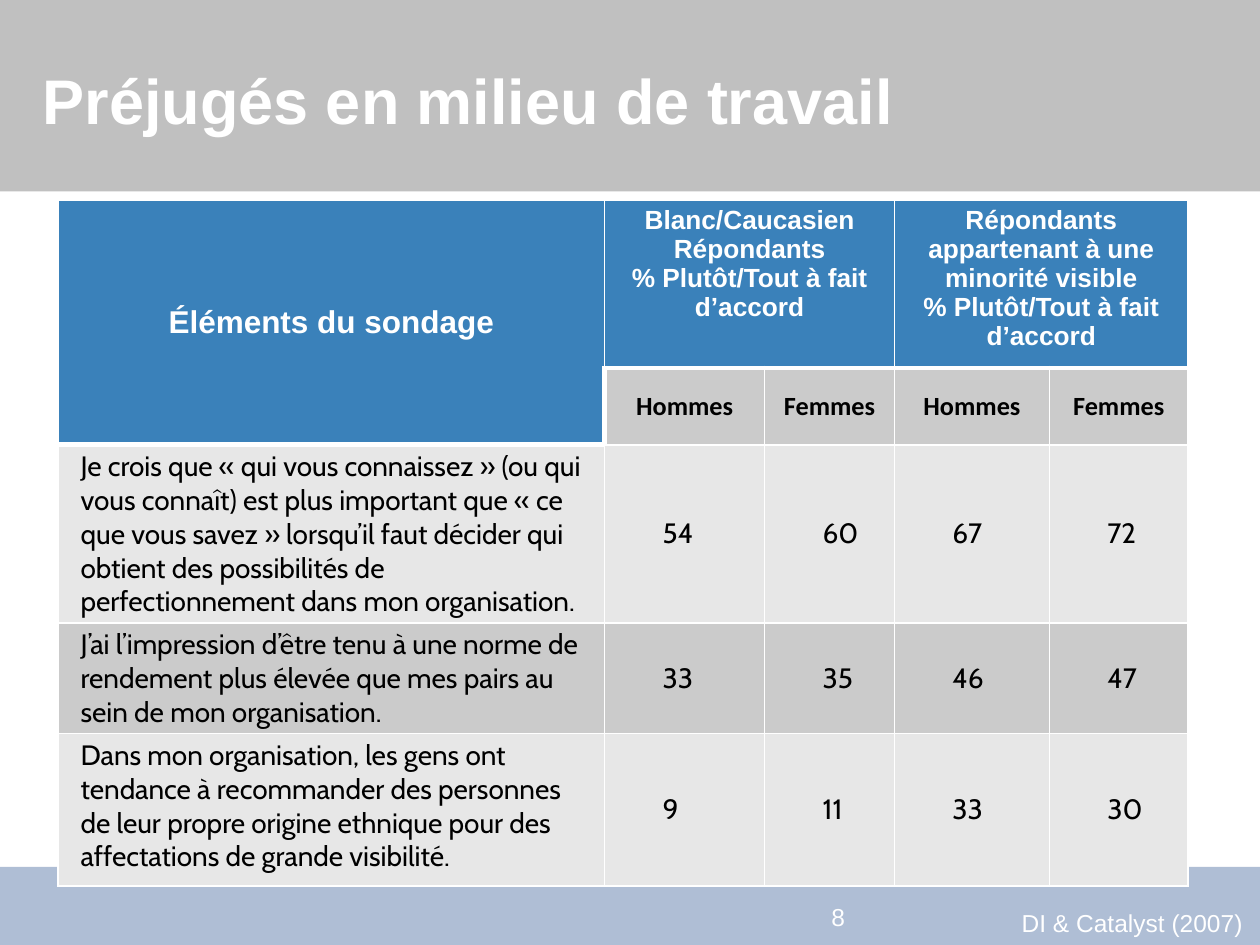
from lxml import etree
from pptx import Presentation
from pptx.dml.color import RGBColor
from pptx.enum.shapes import MSO_SHAPE
from pptx.enum.text import MSO_ANCHOR, PP_ALIGN
from pptx.oxml.ns import qn
from pptx.util import Inches, Pt

RECT = MSO_SHAPE.RECTANGLE
TOP, MIDDLE = MSO_ANCHOR.TOP, MSO_ANCHOR.MIDDLE
LEFT, CENTER = PP_ALIGN.LEFT, PP_ALIGN.CENTER

# Each type style: font, size, bold, colour
THEME = {
    "title": ("Arial", 36, True, "FFFFFF"),
    "note": ("Arial", 14, False, "FFFFFF"),
    "topic": ("Arial", 18, True, "FFFFFF"),
    "group": ("Arial", 15, True, "FFFFFF"),
    "sex": ("Calibri", 15, True, "000000"),
    "body": ("Cabin", 16, False, "000000"),
    "head": "3A81BA",
    "dark": "CBCBCB",
    "light": "E7E7E7",
    "rule": "FFFFFF",
    "banner": "404040",
    "footer": "1C4587",
}


def write(frame, lines, style, align=LEFT, margin=0, indent=0):
    name, size, bold, color = THEME[style]
    for i, line in enumerate(lines):
        para = frame.paragraphs[0] if i == 0 else frame.add_paragraph()
        para.text = line
        para.alignment = align
        props = para._p.get_or_add_pPr()
        props.set("marL", str(Inches(margin)))
        props.set("indent", str(Inches(indent)))
        font = para.font
        font.name, font.size, font.bold = name, Pt(size), bold
        font.color.rgb = RGBColor.from_string(color)


def edge(cell, widths):
    """Draw the left, right, top and bottom borders, in points."""
    props = cell._tc.get_or_add_tcPr()
    for i, (side, width) in enumerate(zip("LRTB", widths)):
        line = etree.Element(qn(f"a:ln{side}"), w=str(Pt(width)))
        fill = etree.SubElement(line, qn("a:solidFill"))
        etree.SubElement(fill, qn("a:srgbClr"), val=THEME["rule"])
        props.insert(i, line)


prs = Presentation()
prs.slide_width, prs.slide_height = Inches(10), Inches(7.5)
slide = prs.slides.add_slide(prs.slide_layouts[6])
shapes = slide.shapes

# Footer and title bands
for top, height, color, alpha in [(6.88, 0.62, "footer", 35), (0, 1.52, "banner", 33)]:
    band = shapes.add_shape(RECT, 0, Inches(top), Inches(10), Inches(height))
    band.shadow.inherit = False
    band.line.fill.background()
    band.fill.solid()
    band.fill.fore_color.rgb = RGBColor.from_string(THEME[color])
    tint = band._element.spPr.find(".//" + qn("a:srgbClr"))
    etree.SubElement(tint, qn("a:alpha"), val=str(alpha * 1000))

# Title, page number and citation
for text, style, wrap, box in [
    ("Préjugés en milieu de travail", "title", True, (0.24, 0.44, 8.82, 1.08)),
    ("8", "note", False, (6.5, 7.11, 0.44, 0.34)),
    ("DI & Catalyst (2007)", "note", False, (8.01, 7.16, 1.97, 0.34)),
]:
    frame = shapes.add_textbox(*map(Inches, box)).text_frame
    frame.word_wrap = wrap
    write(frame, [text], style)

# Survey table
cols = [4.34, 1.27, 1.03, 1.23, 1.1]
rows = [1.32, 0.61, 1.41, 0.87, 1.21]
survey = [
    ("Je crois que « qui vous connaissez » (ou qui vous connaît) est plus important "
     "que « ce que vous savez » lorsqu’il faut décider qui obtient des possibilités "
     "de perfectionnement dans mon organisation.", 54, 60, 67, 72),
    ("J’ai l’impression d’être tenu à une norme de rendement plus élevée que mes "
     "pairs au sein de mon organisation.", 33, 35, 46, 47),
    ("Dans mon organisation, les gens ont tendance à recommander des personnes de "
     "leur propre origine ethnique pour des affectations de grande visibilité.",
     9, 11, 33, 30),
]
table = shapes.add_table(
    len(rows), len(cols), Inches(0.46), Inches(1.59),
    Inches(sum(cols)), Inches(sum(rows))).table
table.first_row = table.horz_banding = False
for col, width in zip(table.columns, cols):
    col.width = Inches(width)
for row, height in zip(table.rows, rows):
    row.height = Inches(height)

for r in range(len(rows)):
    for c in range(len(cols)):
        cell = table.cell(r, c)
        head = r == 0 or (r == 1 and c == 0)
        cell.margin_left = cell.margin_right = Inches(0.08)
        cell.margin_top = cell.margin_bottom = Inches(0.04)
        cell.vertical_anchor = MIDDLE if r and c else TOP
        cell.fill.solid()
        shade = "head" if head else "dark" if r % 2 else "light"
        cell.fill.fore_color.rgb = RGBColor.from_string(THEME[shade])
        thick = [(r, c) == (1, 1), False, (r == 1 and c > 0) or (r, c) == (2, 0), head]
        edge(cell, [3 if side else 1 for side in thick])

table.cell(0, 0).merge(table.cell(1, 0))
table.cell(0, 1).merge(table.cell(0, 2))
table.cell(0, 3).merge(table.cell(0, 4))

topic = table.cell(0, 0)
topic.vertical_anchor = MIDDLE
write(topic.text_frame, ["Éléments du sondage"], "topic", CENTER, 0.38, -0.38)
scale = "% Plutôt/Tout à fait d’accord"
groups = [["Blanc/Caucasien", "Répondants"],
          ["Répondants appartenant à une minorité visible"]]
for c, group in zip((1, 3), groups):
    write(table.cell(0, c).text_frame, group + [scale], "group", CENTER)
    for i, sex in enumerate(("Hommes", "Femmes")):
        write(table.cell(1, c + i).text_frame, [sex], "sex", CENTER, 0.38, -0.38)
for r, record in enumerate(survey, 2):
    for c, value in enumerate(record):
        write(table.cell(r, c).text_frame, [str(value)], "body",
              margin=0.38 if c else 0.1)

prs.save("out.pptx")
